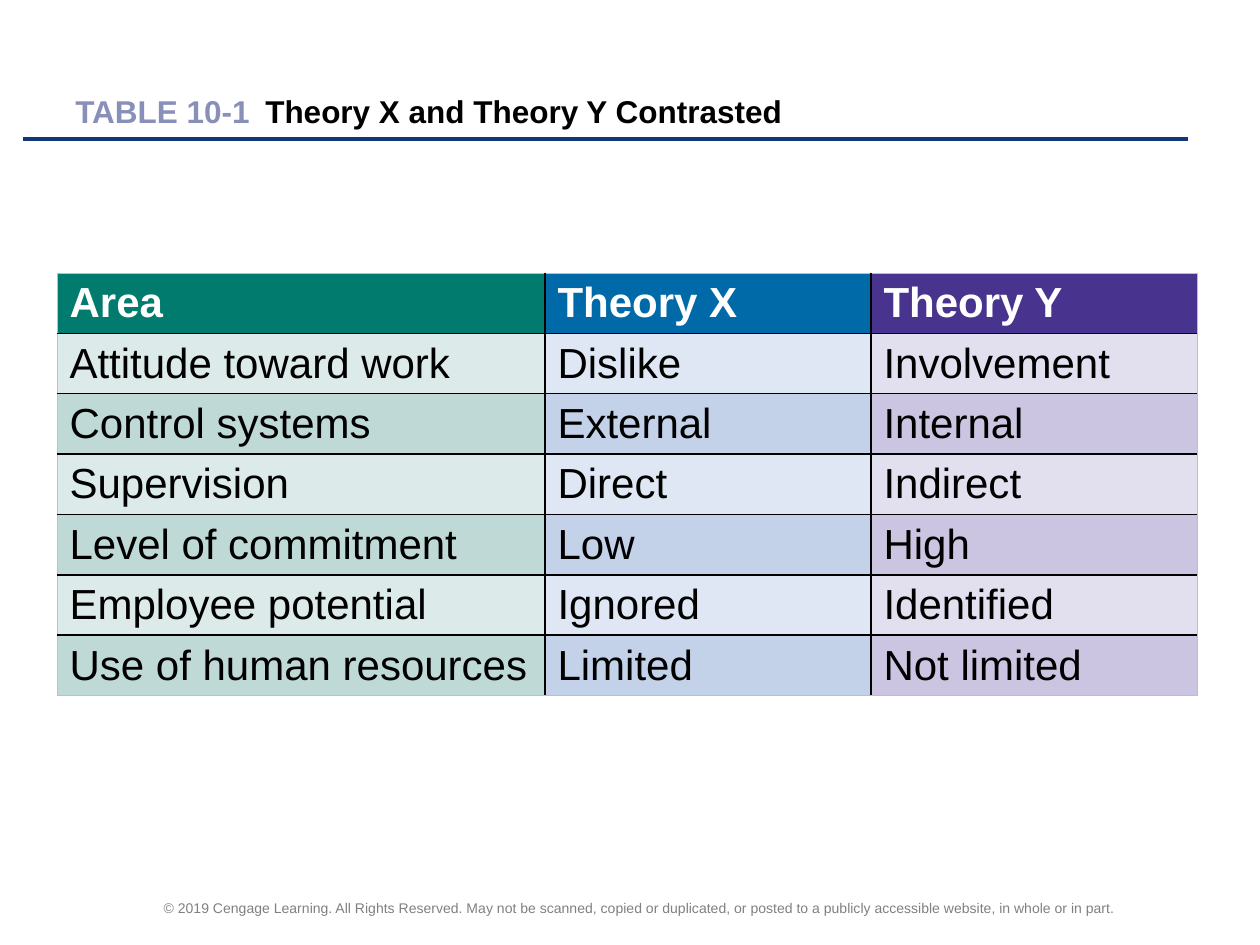
from lxml import etree
from pptx import Presentation, util as u
from pptx.dml.color import RGBColor
from pptx.enum import shapes, text
from pptx.oxml.ns import qn

EMU_PER_PX = 914400 / 126
COLORS = {
    "label": "888FB8", "black": "000000", "white": "FFFFFF",
    "rule": "133676", "footer": "808080", "frame": "BFBFBF",
}
# Per column: header, odd row, even row
COLUMN_FILLS = [
    ("007B6D", "DCEBE9", "BFDAD6"),
    ("006AA9", "DEE7F3", "C3D2E9"),
    ("48348E", "E2DFEF", "CBC5E1"),
]
ROWS = [
    ("Area", "Theory X", "Theory Y"),
    ("Attitude toward work", "Dislike", "Involvement"),
    ("Control systems", "External", "Internal"),
    ("Supervision", "Direct", "Indirect"),
    ("Level of commitment", "Low", "High"),
    ("Employee potential", "Ignored", "Identified"),
    ("Use of human resources", "Limited", "Not limited"),
]
COPYRIGHT = ("© 2019 Cengage Learning. All Rights Reserved. May not be scanned, "
             "copied or duplicated, or posted to a publicly accessible website, "
             "in whole or in part.")


def px(n):
    return u.Emu(round(n * EMU_PER_PX))


def rgb(name):
    return RGBColor.from_string(COLORS[name])


class SlideBuilder:
    def __init__(self, slide, font="Arial"):
        self.slide = slide
        self.font = font

    def style(self, p, size, bold=False, color=None):
        p.font.name = self.font
        p.font.size = u.Pt(size)
        p.font.bold = bold
        if color:
            p.font.color.rgb = rgb(color)

    def text(self, box, runs, size, bold=False, align=text.PP_ALIGN.LEFT, tab=None):
        """Add a one-paragraph text box; runs are (words, color) pairs."""
        tf = self.slide.shapes.add_textbox(*map(px, box)).text_frame
        tf.word_wrap = True
        tf.vertical_anchor = text.MSO_ANCHOR.MIDDLE
        p = tf.paragraphs[0]
        p.alignment = align
        if tab:
            tabs = etree.SubElement(p._p.get_or_add_pPr(), qn("a:tabLst"))
            etree.SubElement(tabs, qn("a:tab"), pos=str(px(tab)), algn="l")
        self.style(p, size, bold)
        for words, color in runs:
            r = p.add_run()
            r.text = words
            r.font.color.rgb = rgb(color)

    def line(self, x1, y1, x2, y2, color, width):
        c = self.slide.shapes.add_connector(
            shapes.MSO_CONNECTOR.STRAIGHT, px(x1), px(y1), px(x2), px(y2))
        c.line.color.rgb = rgb(color)
        c.line.width = u.Pt(width)
        etree.SubElement(c._element.spPr, qn("a:effectLst"))

    def border(self, cell, side, color, width):
        ln = etree.SubElement(cell._tc.get_or_add_tcPr(), qn("a:ln" + side),
                              w=str(u.Pt(width)))
        fill = etree.SubElement(ln, qn("a:solidFill"))
        etree.SubElement(fill, qn("a:srgbClr"), val=COLORS[color])

    def table(self, left, top, widths, height, rows, fills, size):
        """Add a table with thin outer borders and black inner borders."""
        last_row, last_col = len(rows) - 1, len(widths) - 1
        tbl = self.slide.shapes.add_table(
            len(rows), len(widths), px(left), px(top), px(sum(widths)), px(height)).table
        tbl.first_row = tbl.horz_banding = False
        for column, width in zip(tbl.columns, widths):
            column.width = px(width)
        for i, words in enumerate(rows):
            tbl.rows[i].height = px(height / len(rows))
            for j, word in enumerate(words):
                cell = tbl.cell(i, j)
                outer = {"L": j == 0, "R": j == last_col, "T": i == 0, "B": i == last_row}
                for side, is_outer in outer.items():
                    self.border(cell, side, *(("frame", 0.5) if is_outer else ("black", 1)))
                cell.fill.solid()
                shade = 0 if i == 0 else 2 - i % 2
                cell.fill.fore_color.rgb = RGBColor.from_string(fills[j][shade])
                cell.margin_top = cell.margin_bottom = px(5)
                cell.vertical_anchor = text.MSO_ANCHOR.MIDDLE
                p = cell.text_frame.paragraphs[0]
                p.text = word
                self.style(p, size, i == 0, "black" if i else "white")


def main():
    prs = Presentation()
    prs.slide_width, prs.slide_height = px(1260), px(945)
    s = SlideBuilder(prs.slides.add_slide(prs.slide_layouts[6]))
    s.text((94, 892, 1092, 32), [(COPYRIGHT, "footer")], 8, align=text.PP_ALIGN.CENTER)
    s.line(23, 139, 1188, 139, "rule", 2.25)
    s.text((63, 63, 1134, 95),
           [("TABLE 10-1", "label"), ("\tTheory X and Theory Y Contrasted", "black")],
           18, bold=True, tab=190)
    s.table(57, 273, (488, 326, 326), 417, ROWS, COLUMN_FILLS, 24)
    prs.save("out.pptx")


if __name__ == "__main__":
    main()
